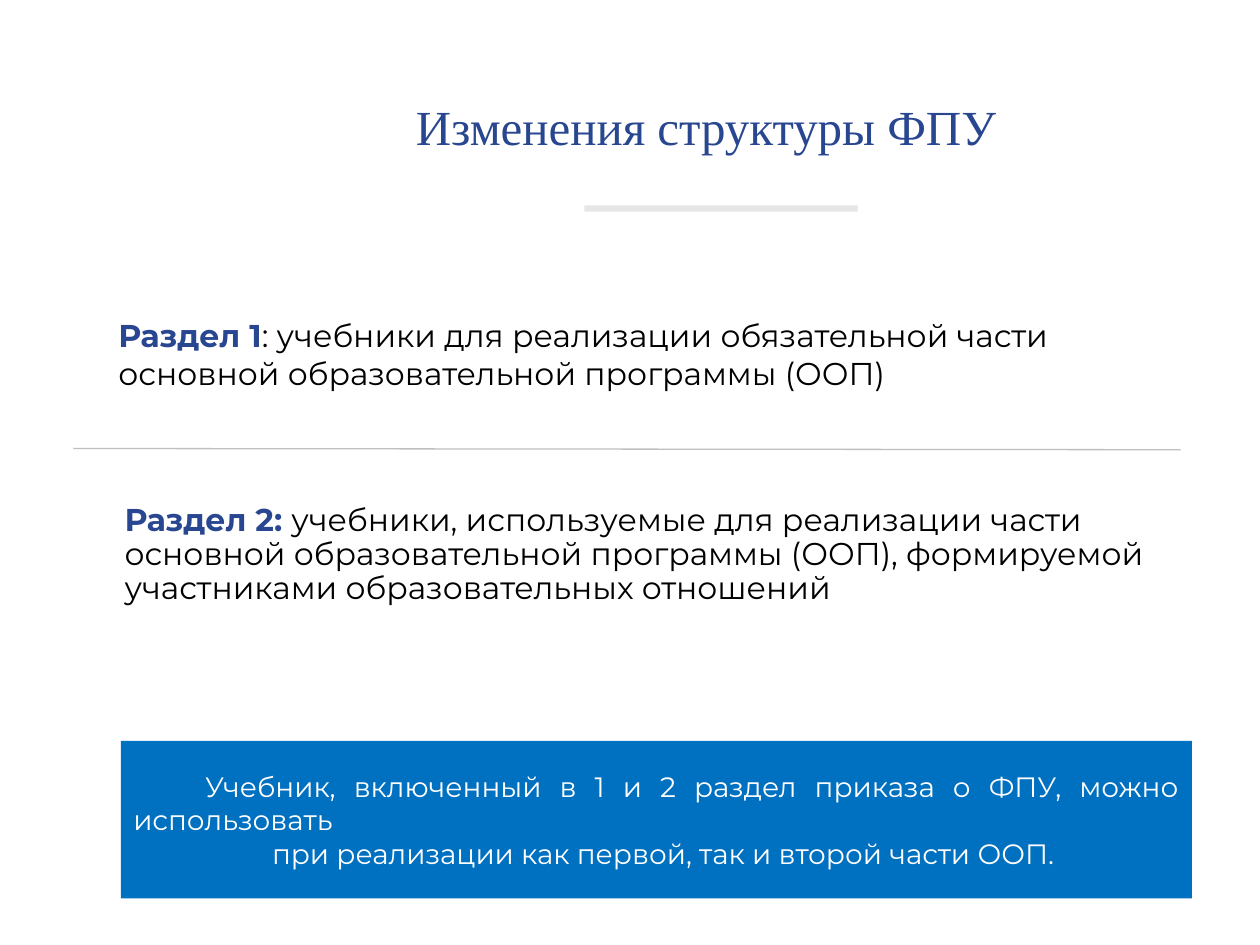
"""Build a slide on the changed structure of the federal textbook list."""
from lxml import etree
from pptx import Presentation
from pptx import util as u
from pptx.dml.color import RGBColor
from pptx.enum import shapes, text
from pptx.oxml.ns import qn

NAVY = RGBColor(0x29, 0x47, 0x90)
BLUE = RGBColor(0x00, 0x70, 0xC0)
BLACK = RGBColor(0x00, 0x00, 0x00)
WHITE = RGBColor(0xFF, 0xFF, 0xFF)
PALE = RGBColor(0xE7, 0xE6, 0xE6)
GREY = RGBColor(0xBF, 0xBF, 0xBF)
BODY_FONT = "Montserrat"
TITLE_FONT = "Times New Roman"


def points(*lengths):
    """Convert lengths in points to slide units."""
    return [u.Pt(length) for length in lengths]


def set_font(font, name, size, color=None):
    """Set the typeface, size and optional colour of a font."""
    font.name = name
    font.size = u.Pt(size)
    if color is not None:
        font.color.rgb = color


def set_title(page, wording):
    """Place and format the title placeholder."""
    title = page.shapes.title
    title.left, title.top, title.width, title.height = points(230.4, 51.8, 471.6, 41)
    frame = title.text_frame
    frame.text = wording
    frame.auto_size = text.MSO_AUTO_SIZE.NONE
    frame.vertical_anchor = text.MSO_ANCHOR.TOP
    para = frame.paragraphs[0]
    para.alignment = text.PP_ALIGN.LEFT
    set_font(para.font, TITLE_FONT, 28, NAVY)


def add_section(page, place, label, colon_bold, wording, inset, spacing):
    """Add a section text that opens with a bold label."""
    box = page.shapes.add_textbox(*points(*place))
    frame = box.text_frame
    frame.word_wrap = True
    frame.margin_left = frame.margin_right = u.Pt(inset)
    frame.margin_top = frame.margin_bottom = u.Pt(inset / 2)
    para = frame.paragraphs[0]
    para.line_spacing = spacing
    set_font(para.font, BODY_FONT, 18)
    head, tail = (label + ": ", wording) if colon_bold else (label, ": " + wording)
    for part, color, bold in ((head, NAVY, True), (tail, BLACK, False)):
        span = para.add_run()
        span.text = part
        span.font.color.rgb = color
        span.font.bold = bold


def add_block(page, place, color):
    """Add a plain filled rectangle."""
    block = page.shapes.add_shape(shapes.MSO_SHAPE.RECTANGLE, *points(*place))
    block.shadow.inherit = False
    block.fill.solid()
    block.fill.fore_color.rgb = color
    block.line.fill.background()
    return block


def add_divider(page, ends):
    """Add a thin grey line."""
    line = page.shapes.add_connector(shapes.MSO_CONNECTOR.STRAIGHT, *points(*ends))
    line.line.color.rgb = GREY
    line.line.width = u.Pt(0.75)
    etree.SubElement(line._element.spPr, qn("a:effectLst"))


def add_callout(page, place, lines):
    """Add the blue conclusion with its indented paragraphs."""
    frame = add_block(page, place, BLUE).text_frame
    frame.word_wrap = True
    frame.margin_top = frame.margin_bottom = u.Pt(14.4)
    frame.vertical_anchor = text.MSO_ANCHOR.MIDDLE
    for number, (wording, alignment, indent) in enumerate(lines):
        para = frame.add_paragraph() if number else frame.paragraphs[0]
        para.text = wording
        para.alignment = alignment
        para._p.get_or_add_pPr().set("indent", str(u.Pt(indent)))
        set_font(para.font, BODY_FONT, 16, WHITE)


def main():
    """Build and save the slide."""
    deck = Presentation()
    deck.slide_width, deck.slide_height = points(720, 540)
    page = deck.slides.add_slide(deck.slide_layouts[5])
    set_title(page, "Изменения структуры ФПУ")
    add_section(
        page, (67.7, 180.7, 587.5, 44), "Раздел 1", False,
        "учебники для реализации обязательной части "
        "основной образовательной программы (ООП)", 0, 1.0)
    add_divider(page, (42, 256.3, 674.6, 257))
    add_section(
        page, (64.1, 284.4, 615, 66.2), "Раздел 2", True,
        "учебники, используемые для реализации части "
        "основной образовательной программы (ООП), формируемой "
        "участниками образовательных отношений", 7.2, 0.9)
    add_callout(page, (69.1, 423.4, 612, 90), (
        ("Учебник, включенный в 1 и 2 раздел приказа о ФПУ, можно использовать",
         text.PP_ALIGN.JUSTIFY, 41),
        ("при реализации как первой, так и второй части ООП.",
         text.PP_ALIGN.CENTER, 8)))
    add_block(page, (334, 117.4, 156.2, 3.6), PALE)
    deck.save("out.pptx")


if __name__ == "__main__":
    main()
